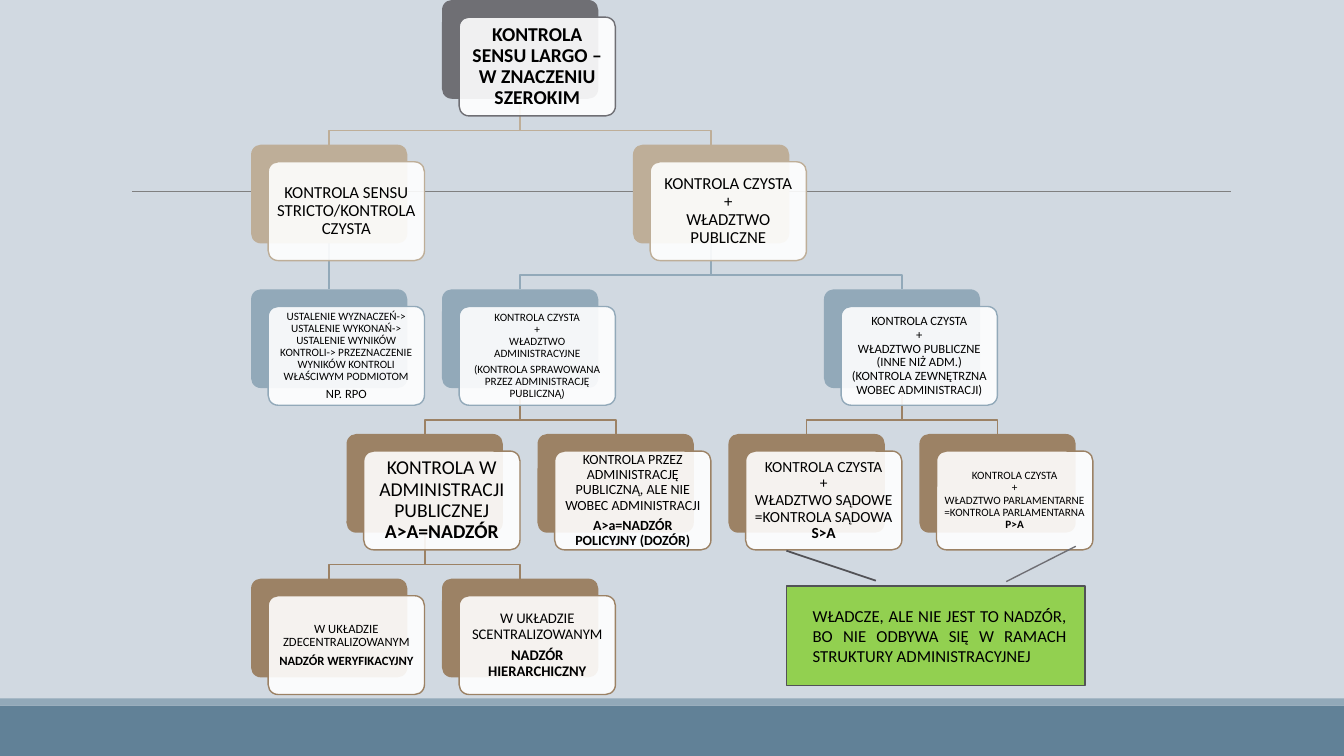
from lxml import etree
from pptx import Presentation
from pptx.dml.color import RGBColor
from pptx.enum.shapes import MSO_CONNECTOR, MSO_SHAPE
from pptx.enum.text import MSO_ANCHOR, PP_ALIGN
from pptx.oxml.ns import qn
from pptx.util import Inches, Pt

STRAIGHT = MSO_CONNECTOR.STRAIGHT
RECTANGLE = MSO_SHAPE.RECTANGLE
ROUNDED = MSO_SHAPE.ROUNDED_RECTANGLE
CALLOUT = MSO_SHAPE.LINE_CALLOUT_1
MIDDLE = MSO_ANCHOR.MIDDLE
CENTER, JUSTIFY = PP_ALIGN.CENTER, PP_ALIGN.JUSTIFY

FONT = "Calibri"
COLORS = {
    "background": "D1D9E1", "band": "618197", "stripe": "92A9B9", "rule": "808080",
    "gray": "6F6F74", "sand": "BEAE98", "blue": "92A9B9", "brown": "9C8265",
    "white": "FFFFFF", "text": "000000", "green": "92D050", "outline": "525256",
}

# Tree grid: cards sit on half-width columns and equal rows
COLUMN_STEP, ROW_STEP = 0.947, 1.435
CARD_W, CARD_H = 1.55, 0.98
FRONT_DX, FRONT_DY = 0.17, 0.17
ELBOW_RISE = 0.14

# Card: (column, row, colour, paragraphs); a paragraph is (size, [(text, bold), ...])
CARDS = {
    "largo": (2, 0, "gray", [(14, [("KONTROLA SENSU LARGO – W ZNACZENIU SZEROKIM", True)])]),
    "stricto": (0, 1, "sand", [(12, [("KONTROLA SENSU STRICTO/KONTROLA CZYSTA", False)])]),
    "stages": (0, 2, "blue", [
        (8, [("USTALENIE WYZNACZEŃ-> USTALENIE WYKONAŃ-> USTALENIE WYNIKÓW KONTROLI-> "
              "PRZEZNACZENIE WYNIKÓW KONTROLI WŁAŚCIWYM PODMIOTOM", False)]),
        (9, [("NP. RPO", False)])]),
    "public": (4, 1, "sand", [(12, [("KONTROLA CZYSTA\n+\nWŁADZTWO PUBLICZNE", False)])]),
    "administrative": (2, 2, "blue", [
        (8, [("KONTROLA CZYSTA\n+\nWŁADZTWO ADMINISTRACYJNE", False)]),
        (8, [("(KONTROLA SPRAWOWANA PRZEZ ADMINISTRACJĘ PUBLICZNĄ)", False)])]),
    "inside": (1, 3, "brown", [
        (14, [("KONTROLA W ADMINISTRACJI PUBLICZNEJ\n", False), ("A>A=NADZÓR", True)])]),
    "decentralized": (0, 4, "brown", [
        (9, [("W UKŁADZIE ZDECENTRALIZOWANYM", False)]),
        (9, [("NADZÓR WERYFIKACYJNY", True)])]),
    "centralized": (2, 4, "brown", [
        (10.5, [("W UKŁADZIE SCENTRALIZOWANYM", False)]),
        (10.5, [("NADZÓR HIERARCHICZNY", True)])]),
    "police": (3, 3, "brown", [
        (10, [("KONTROLA PRZEZ ADMINISTRACJĘ PUBLICZNĄ, ALE NIE WOBEC ADMINISTRACJI", False)]),
        (10, [("A>a=NADZÓR POLICYJNY (DOZÓR)", True)])]),
    "external": (6, 2, "blue", [
        (9, [("KONTROLA CZYSTA\n+\nWŁADZTWO PUBLICZNE (INNE NIŻ ADM.)\n"
              "(KONTROLA ZEWNĘTRZNA WOBEC ADMINISTRACJI)", False)])]),
    "court": (5, 3, "brown", [
        (11, [("KONTROLA CZYSTA\n+\nWŁADZTWO SĄDOWE\n=KONTROLA SĄDOWA\n", False),
              ("S>A", True)])]),
    "parliament": (7, 3, "brown", [
        (8, [("KONTROLA CZYSTA\n+\nWŁADZTWO PARLAMENTARNE\n=KONTROLA PARLAMENTARNA\n", False),
             ("P>A", True)])]),
}
BRANCHES = [
    ("external", "parliament"), ("external", "court"), ("public", "external"),
    ("administrative", "police"), ("inside", "centralized"), ("inside", "decentralized"),
    ("administrative", "inside"), ("public", "administrative"), ("largo", "public"),
    ("stricto", "stages"), ("largo", "stricto"),
]
NOTE = ("WŁADCZE, ALE NIE JEST TO NADZÓR, BO NIE ODBYWA SIĘ W RAMACH "
        "STRUKTURY ADMINISTRACYJNEJ")


def rgb(name):
    return RGBColor.from_string(COLORS[name])


def add_block(slide, kind, box, fill, line=None, width=1, opacity=None):
    block = slide.shapes.add_shape(kind, *map(Inches, box))
    block.shadow.inherit = False
    block.fill.solid()
    block.fill.fore_color.rgb = rgb(fill)
    if opacity:
        fill_color = next(block.element.spPr.iter(qn("a:srgbClr")))
        etree.SubElement(fill_color, qn("a:alpha")).set("val", str(opacity * 1000))
    if line:
        block.line.color.rgb = rgb(line)
        block.line.width = Pt(width)
    else:
        block.line.fill.background()
    return block


def add_line(slide, start, end, color, width):
    line = slide.shapes.add_connector(STRAIGHT, *map(Inches, start + end))
    line.line.color.rgb = rgb(color)
    line.line.width = Pt(width)
    etree.SubElement(line.element.spPr, qn("a:effectLst"))


def write_paragraph(paragraph, size, runs, align):
    paragraph.alignment = align
    for text, bold in runs:
        for index, part in enumerate(text.split("\n")):
            if index:
                paragraph.add_line_break()
            if part:
                run = paragraph.add_run()
                run.text = part
                run.font.name = FONT
                run.font.size = Pt(size)
                run.font.bold = bold
                run.font.color.rgb = rgb("text")


def prepare_frame(block, left, top, right, bottom):
    frame = block.text_frame
    frame.word_wrap = True
    frame.vertical_anchor = MIDDLE
    frame.margin_left, frame.margin_right = left, right
    frame.margin_top, frame.margin_bottom = top, bottom
    return frame


def add_backdrop(slide, width, height):
    slide.background.fill.solid()
    slide.background.fill.fore_color.rgb = rgb("background")
    add_block(slide, RECTANGLE, (0, height - 0.5, width, 0.5), "band")
    add_block(slide, RECTANGLE, (0, height - 0.57, width, 0.07), "stripe")
    add_line(slide, (1.31, 1.9), (12.21, 1.9), "rule", 0.5)


def add_branch(slide, parent, child, color):
    """Joins the bottom of the parent box to the top of the child box."""
    start_x, start_y = parent[0] + CARD_W / 2, parent[1] + CARD_H
    end_x, end_y = child[0] + CARD_W / 2, child[1]
    if start_x == end_x:
        add_line(slide, (start_x, start_y), (end_x, end_y), color, 1.25)
        return
    elbow_y = end_y - ELBOW_RISE
    corners = [(start_x, elbow_y), (end_x, elbow_y), (end_x, end_y)]
    builder = slide.shapes.build_freeform(Inches(start_x), Inches(start_y))
    builder.add_line_segments([(Inches(x), Inches(y)) for x, y in corners], close=False)
    branch = builder.convert_to_shape()
    branch.shadow.inherit = False
    branch.fill.background()
    branch.line.color.rgb = rgb(color)
    branch.line.width = Pt(1.25)


def add_card(slide, box, color, paragraphs):
    left, top, width, height = box
    back = add_block(slide, ROUNDED, box, color)
    front = add_block(slide, ROUNDED, (left + FRONT_DX, top + FRONT_DY, width, height),
                      "white", color, opacity=90)
    back.adjustments[0] = front.adjustments[0] = 0.1
    margin = Pt(0.3 * paragraphs[0][0])
    frame = prepare_frame(front, margin, margin, margin, margin)
    for index, (size, runs) in enumerate(paragraphs):
        paragraph = frame.add_paragraph() if index else frame.paragraphs[0]
        paragraph.line_spacing = 0.9
        paragraph.space_after = Pt(0.35 * size)
        write_paragraph(paragraph, size, runs, CENTER)


def add_tree(slide, left, top):
    boxes = {name: (left + column * COLUMN_STEP, top + row * ROW_STEP, CARD_W, CARD_H)
             for name, (column, row, _, _) in CARDS.items()}
    for parent, child in BRANCHES:
        add_branch(slide, boxes[parent], boxes[child], CARDS[child][2])
    for name, (_, _, color, paragraphs) in CARDS.items():
        add_card(slide, boxes[name], color, paragraphs)


def add_note(slide, box):
    left, top, width, _ = box
    note = add_block(slide, CALLOUT, box, "green", "outline", 1.25)
    for index, value in enumerate((-0.35, 0, -0.05, 0.3)):
        note.adjustments[index] = value
    frame = prepare_frame(note, Inches(0.26), Inches(0.05), Inches(0.18), Inches(0.05))
    write_paragraph(frame.paragraphs[0], 12, [(NOTE, False)], JUSTIFY)
    # Second pointer, towards the parliamentary card
    add_line(slide, (left + width - 0.78, top - 0.04), (left + width - 0.09, top - 0.39),
             "gray", 1)


def main():
    deck = Presentation()
    deck.slide_width, deck.slide_height = Inches(13.33), Inches(7.5)
    slide = deck.slides.add_slide(deck.slide_layouts[6])
    add_backdrop(slide, 13.33, 7.5)
    add_tree(slide, 2.49, 0)
    add_note(slide, (7.8, 5.81, 2.96, 0.99))
    deck.save("out.pptx")


if __name__ == "__main__":
    main()
